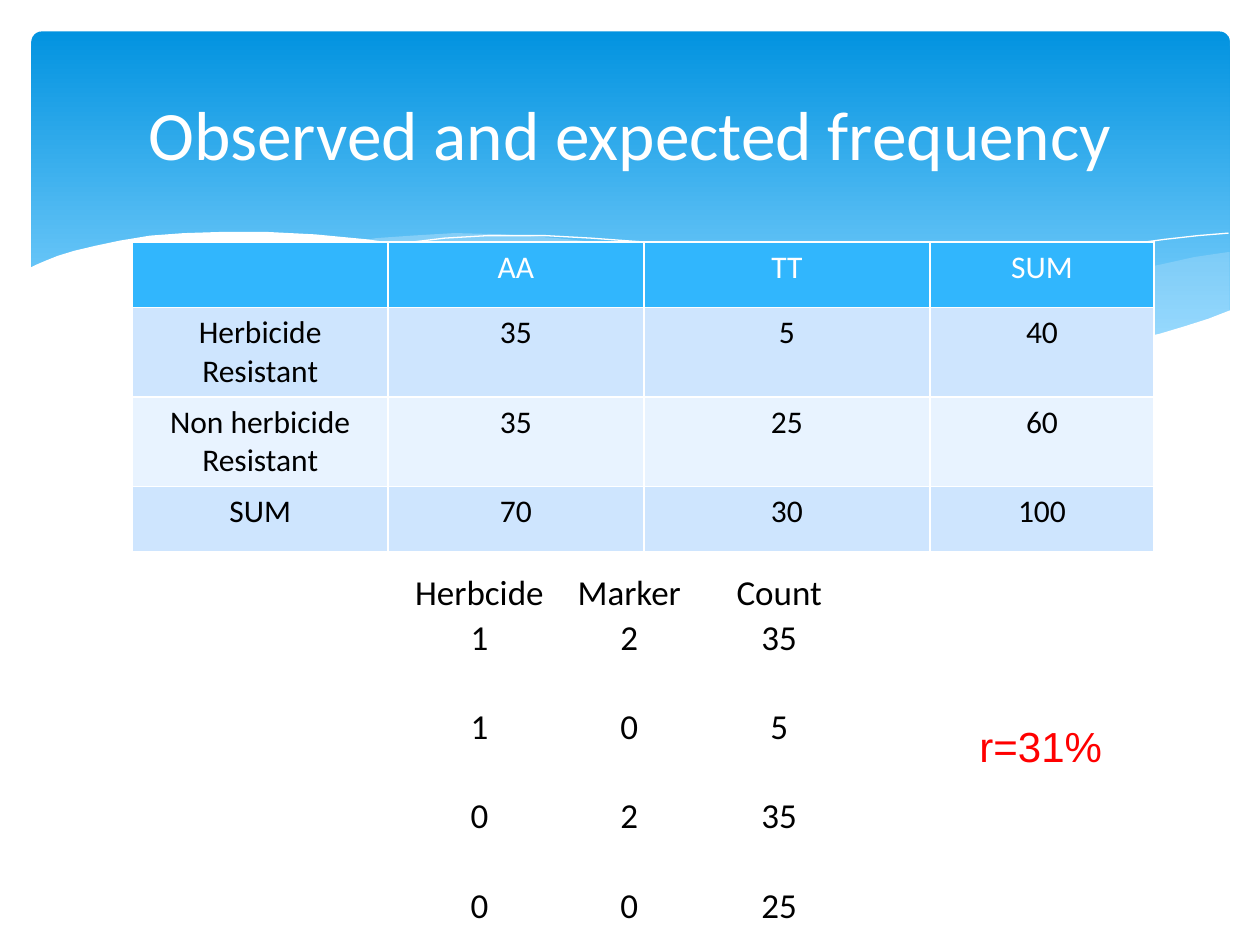
from lxml import etree
from pptx import Presentation
from pptx.dml.color import RGBColor
from pptx.enum.shapes import MSO_SHAPE
from pptx.enum.text import MSO_ANCHOR, MSO_AUTO_SIZE, PP_ALIGN
from pptx.oxml.ns import qn
from pptx.util import Inches, Pt

CENTER = PP_ALIGN.CENTER
TOP, MIDDLE, BOTTOM = MSO_ANCHOR.TOP, MSO_ANCHOR.MIDDLE, MSO_ANCHOR.BOTTOM
WHITE = RGBColor(0xFF, 0xFF, 0xFF)
BLACK = RGBColor(0, 0, 0)
RED = RGBColor(0xFF, 0, 0)
DEEP_BLUE = RGBColor(0x02, 0x93, 0xE0)
SKY_BLUE = RGBColor(0x83, 0xD3, 0xFE)
MIST_BLUE = RGBColor(0xC6, 0xE7, 0xFC)
HEADER_BLUE = RGBColor(0x31, 0xB6, 0xFD)
BAND_DARK = RGBColor(0xCE, 0xE5, 0xFE)
BAND_LIGHT = RGBColor(0xE8, 0xF3, 0xFF)

prs = Presentation()
prs.slide_width, prs.slide_height = Inches(10), Inches(7.5)
U = prs.slide_width // 1000  # grid unit: a thousandth of the slide's width
slide = prs.slides.add_slide(prs.slide_layouts[5])
shapes = slide.shapes


def write(holder, text, size, color, font="Calibri", anchor=TOP):
    """Put centred text, one paragraph a line, into a shape or table cell."""
    frame = holder.text_frame
    frame.word_wrap = True
    frame.vertical_anchor = anchor
    frame.text = text
    for paragraph in frame.paragraphs:
        paragraph.alignment = CENTER
        paragraph.font.size = Pt(size)
        for run in paragraph.runs:
            run.font.size, run.font.name = Pt(size), font
            run.font.bold = False
            run.font.color.rgb = color


def set_opacity(shape, percent):
    color = shape.fill._xPr.find(qn("a:solidFill"))[0]
    etree.SubElement(color, qn("a:alpha")).set("val", str(percent * 1000))


# Banner with a vertical gradient
banner = shapes.add_shape(MSO_SHAPE.ROUNDED_RECTANGLE,
                          25 * U, 25 * U, 951 * U, 270 * U)
banner.adjustments[0] = 0.03
banner.shadow.inherit = False
banner.line.fill.background()
banner.fill.gradient()
banner.fill.gradient_angle = 270
for stop, color, position in zip(banner.fill.gradient_stops,
                                 (DEEP_BLUE, SKY_BLUE), (0, 0.9)):
    stop.color.rgb, stop.position = color, position

# Waves along the banner's lower edge: fill, opacity, outline points
right_swell = [
    (975, 200), (948, 204), (921, 210), (891, 216), (861, 223), (805, 237),
    (753, 248), (706, 257), (661, 265), (691, 269), (719, 272), (745, 275),
    (781, 277), (814, 278), (844, 277), (872, 274), (897, 270), (921, 265),
    (942, 259), (963, 252), (976, 247), (976, 200)]
middle_swell = [
    (893, 273), (866, 269), (807, 260), (741, 247), (668, 231), (629, 222),
    (598, 214), (569, 208), (541, 203), (514, 198), (489, 194), (442, 189),
    (399, 186), (361, 185), (328, 187), (299, 189), (286, 191), (323, 196),
    (362, 203), (404, 211), (449, 222), (530, 240), (601, 255), (665, 266),
    (722, 274), (773, 277), (818, 278), (857, 277), (893, 273)]
long_crest = [
    (309, 195), (328, 192), (353, 189), (387, 187), (433, 187), (469, 189),
    (510, 192), (556, 197), (608, 204), (665, 213), (727, 226), (795, 241),
    (869, 261), (907, 272)]
right_crest = [
    (613, 257), (653, 246), (695, 235), (748, 223), (806, 210), (866, 199),
    (895, 194), (924, 190), (951, 187), (975, 185)]
white_edge = [
    (977, 246), (959, 253), (940, 259), (920, 265), (899, 269), (875, 273),
    (850, 275), (823, 277), (793, 276), (761, 275), (726, 272), (688, 268),
    (648, 262), (603, 254), (555, 245), (503, 233), (447, 220), (391, 207),
    (340, 197), (292, 190), (250, 186), (211, 184), (177, 184), (146, 185),
    (119, 187), (95, 191), (76, 195), (59, 199), (46, 203), (36, 207),
    (29, 210), (23, 213), (23, 329), (977, 329)]
waves = [(MIST_BLUE, 29, right_swell), (MIST_BLUE, 40, middle_swell),
         (None, 100, long_crest), (None, 100, right_crest),
         (WHITE, 100, white_edge)]
for color, opacity, points in waves:
    builder = shapes.build_freeform(*points[0], scale=U)
    builder.add_line_segments(points[1:], close=color is not None)
    wave = builder.convert_to_shape()
    wave.shadow.inherit = False
    if color is None:
        wave.fill.background()
        wave.line.color.rgb, wave.line.width = WHITE, Pt(0)
    else:
        wave.fill.solid()
        wave.fill.fore_color.rgb = color
        set_opacity(wave, opacity)
        wave.line.fill.background()

# Title, lifted above the banner
title = shapes.title
title.left, title.top, title.width, title.height = 50 * U, 37 * U, 900 * U, 137 * U
write(title, "Observed and expected frequency", 39.6, WHITE, anchor=MIDDLE)
shapes._spTree.append(title._element)

# Frequency table
frequencies = [
    ("", "AA", "TT", "SUM"),
    ("Herbicide Resistant", "35", "5", "40"),
    ("Non herbicide\nResistant", "35", "25", "60"),
    ("SUM", "70", "30", "100")]
row_fills = [HEADER_BLUE, BAND_DARK, BAND_LIGHT, BAND_DARK]
frequency_table = shapes.add_table(4, 4, 105 * U, 192 * U, 811 * U, 246 * U).table
for column, width in zip(frequency_table.columns, (203, 203, 227, 178)):
    column.width = width * U
for r, height in enumerate((52, 71, 71, 52)):
    frequency_table.rows[r].height = height * U
    for c, value in enumerate(frequencies[r]):
        cell = frequency_table.cell(r, c)
        cell.fill.solid()
        cell.fill.fore_color.rgb = row_fills[r]
        write(cell, value, 18, BLACK if r else WHITE)

# Herbicide and marker counts, an empty row between records
blank = ("", "", "")
counts = [
    ("Herbcide", "Marker", "Count"),
    ("1", "2", "35"), blank,
    ("1", "0", "5"), blank,
    ("0", "2", "35"), blank,
    ("0", "0", "25")]
count_table = shapes.add_table(len(counts), 3, 321 * U, 453 * U,
                               357 * U, 284 * U).table
count_table.first_row = count_table.horz_banding = False
for r, record in enumerate(counts):
    for c, value in enumerate(record):
        cell = count_table.cell(r, c)
        cell.fill.background()
        cell.margin_left = cell.margin_right = cell.margin_top = U
        cell.margin_bottom = 0
        write(cell, value, 20, BLACK, anchor=BOTTOM)

# Recombination rate
rate = shapes.add_shape(MSO_SHAPE.RECTANGLE, 652 * U, 567 * U, 348 * U, 50 * U)
rate.shadow.inherit = False
rate.fill.solid()
rate.fill.fore_color.rgb = WHITE
set_opacity(rate, 95)
rate.line.fill.background()
write(rate, "r=31%", 24, RED, font="Arial")
rate.text_frame.auto_size = MSO_AUTO_SIZE.SHAPE_TO_FIT_TEXT

prs.save("out.pptx")
